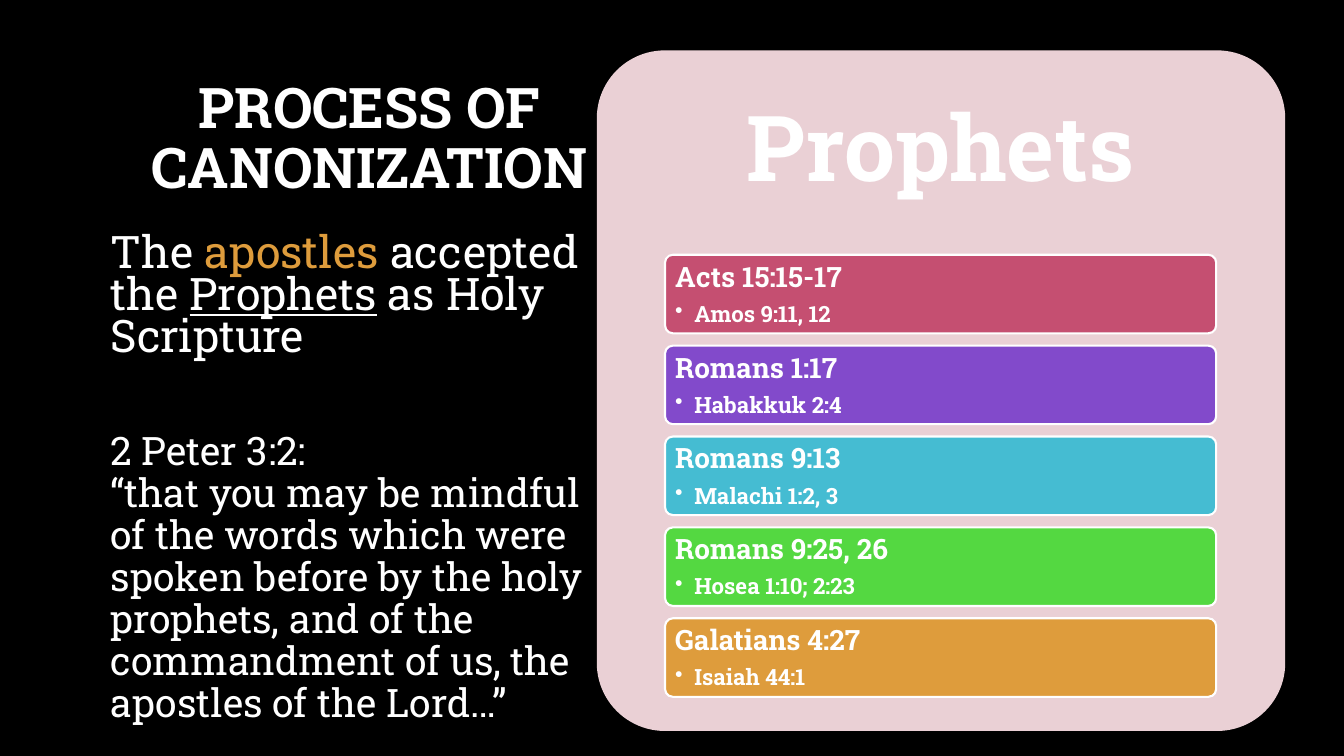
from dataclasses import dataclass

from lxml.etree import SubElement
from pptx import Presentation
from pptx.dml.color import RGBColor
from pptx.enum.shapes import MSO_SHAPE
from pptx.enum.text import MSO_ANCHOR, PP_ALIGN
from pptx.oxml.ns import qn
from pptx.util import Cm, Pt


@dataclass(frozen=True)
class Theme:
    font: str = "Roboto Slab"
    background: str = "000000"
    text: str = "FFFFFF"
    accent: str = "DE9C3C"
    panel: str = "EAD0D5"
    cards: tuple = ("C54F71", "824ACB", "45BCD2", "54D841", "DE9C3C")
    title_size: int = 40
    heading_size: int = 65
    statement_size: int = 32
    quote_size: int = 28
    reference_size: int = 20
    source_size: int = 16


theme = Theme()


def add_span(para, text, size, color=theme.text, bold=False, underline=False):
    span = para.add_run()
    span.text = text
    span.font.name = theme.font
    span.font.size = Pt(size)
    span.font.color.rgb = RGBColor.from_string(color)
    span.font.bold = bold
    span.font.underline = underline


def add_round_box(left, top, width, height, color):
    box = page.shapes.add_shape(
        MSO_SHAPE.ROUNDED_RECTANGLE, Cm(left), Cm(top), Cm(width), Cm(height))
    box.adjustments[0] = 0.1
    box.shadow.inherit = False
    box.fill.solid()
    box.fill.fore_color.rgb = RGBColor.from_string(color)
    box.line.fill.background()
    return box


deck = Presentation()
deck.slide_width, deck.slide_height = Cm(33.87), Cm(19.05)
page = deck.slides.add_slide(deck.slide_layouts[6])
page.background.fill.solid()
page.background.fill.fore_color.rgb = RGBColor.from_string(theme.background)

# Panel behind the heading and the cards
add_round_box(15.04, 1.27, 17.35, 17.15, theme.panel)

# Slide title and panel heading
headings = [
    ("PROCESS OF CANONIZATION", theme.title_size, 2.54, 1.7, 13.54, 3.68),
    ("Prophets", theme.heading_size, 15.04, 1.27, 17.35, 5.13),
]
for text, size, left, top, width, height in headings:
    box = page.shapes.add_textbox(Cm(left), Cm(top), Cm(width), Cm(height))
    box.text_frame.word_wrap = True
    box.text_frame.vertical_anchor = MSO_ANCHOR.MIDDLE
    para = box.text_frame.paragraphs[0]
    para.alignment = PP_ALIGN.CENTER
    para.line_spacing = 0.9
    add_span(para, text, size, bold=True)

# Statement and quotation
body = page.shapes.add_textbox(Cm(2.54), Cm(5.82), Cm(12.5), Cm(10.26)).text_frame
body.word_wrap = True
statement = body.paragraphs[0]
statement.space_before = Pt(10)
add_span(statement, "The ", theme.statement_size)
add_span(statement, "apostles", theme.statement_size, color=theme.accent)
add_span(statement, " accepted the ", theme.statement_size)
add_span(statement, "Prophets", theme.statement_size, underline=True)
add_span(statement, " as Holy Scripture", theme.statement_size)

quote = body.add_paragraph()
quote.space_before = Pt(50)
add_span(quote, "2 Peter 3:2: ", theme.quote_size)
quote.add_line_break()
add_span(quote, "“that you may be mindful of the words which were spoken before "
         "by the holy prophets, and of the commandment of us, the apostles "
         "of the Lord…”", theme.quote_size)
for para in body.paragraphs:
    para.line_spacing = Pt(30)

# Cards: New Testament reference and the prophet it quotes
references = [
    ("Acts 15:15-17", "Amos 9:11, 12"),
    ("Romans 1:17", "Habakkuk 2:4"),
    ("Romans 9:13", "Malachi 1:2, 3"),
    ("Romans 9:25, 26", "Hosea 1:10; 2:23"),
    ("Galatians 4:27", "Isaiah 44:1"),
]
first_card_top, card_pitch = 6.42, 2.29
for index, (reference, source) in enumerate(references):
    card = add_round_box(16.76, first_card_top + index * card_pitch,
                         13.89, 1.98, theme.cards[index])
    card.line.color.rgb = RGBColor.from_string(theme.text)
    card.line.width = Pt(1.5)
    frame = card.text_frame
    frame.word_wrap = True
    frame.vertical_anchor = MSO_ANCHOR.TOP
    frame.margin_left = frame.margin_right = Cm(0.2)
    frame.margin_top = frame.margin_bottom = Cm(0.15)

    reference_para = frame.paragraphs[0]
    reference_para.space_after = Pt(7)
    add_span(reference_para, reference, theme.reference_size, bold=True)

    source_para = frame.add_paragraph()
    source_para.level = 1
    add_span(source_para, source, theme.source_size, bold=True)
    properties = source_para._p.get_or_add_pPr()
    properties.set("marL", str(Cm(0.48)))
    properties.set("indent", str(-Cm(0.48)))
    SubElement(properties, qn("a:buChar")).set("char", "•")

    for para in frame.paragraphs:
        para.alignment = PP_ALIGN.LEFT
        para.line_spacing = 0.9

deck.save("out.pptx")
